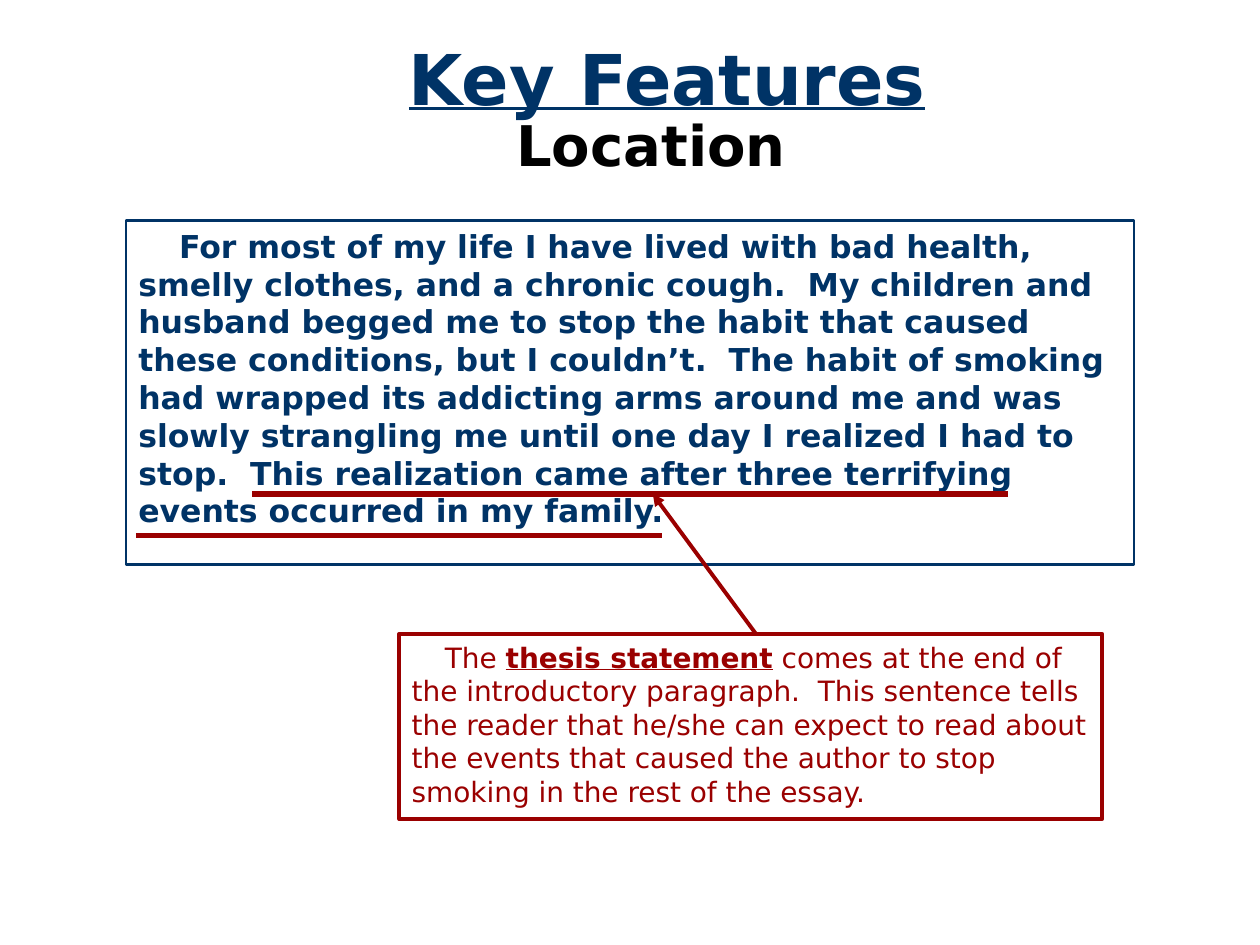
from dataclasses import dataclass

from lxml import etree
from pptx import Presentation
from pptx.dml.color import RGBColor
from pptx.enum.shapes import MSO_CONNECTOR, MSO_SHAPE
from pptx.enum.text import MSO_ANCHOR, PP_ALIGN
from pptx.oxml.ns import qn
from pptx.util import Cm, Pt

RECTANGLE, STRAIGHT = MSO_SHAPE.RECTANGLE, MSO_CONNECTOR.STRAIGHT
TOP, BOTTOM = MSO_ANCHOR.TOP, MSO_ANCHOR.BOTTOM
LEFT, CENTER = PP_ALIGN.LEFT, PP_ALIGN.CENTER


@dataclass(frozen=True)
class Theme:
    font: str = "DejaVu Sans"
    navy: RGBColor = RGBColor(0x00, 0x33, 0x66)
    red: RGBColor = RGBColor(0x9A, 0x00, 0x00)
    black: RGBColor = RGBColor(0, 0, 0)
    white: RGBColor = RGBColor(0xFF, 0xFF, 0xFF)
    title: int = 40
    subtitle: int = 32
    passage: int = 18
    callout: int = 16
    passage_border: float = 1.5
    callout_border: float = 2.25
    underline: float = 3


THEME = Theme()


def write_runs(shape, runs, size, color, align=LEFT, anchor=TOP, indent=0):
    """Fill one paragraph from (wording, bold, underlined) runs."""
    frame = shape.text_frame
    frame.word_wrap = True
    frame.vertical_anchor = anchor
    paragraph = frame.paragraphs[0]
    paragraph.alignment = align
    if indent:
        properties = paragraph._p.get_or_add_pPr()
        properties.set("marL", "0")
        properties.set("indent", str(Cm(indent)))
    for wording, bold, underlined in runs:
        run = paragraph.add_run()
        run.text = wording
        run.font.name = THEME.font
        run.font.size = Pt(size)
        run.font.color.rgb = color
        run.font.bold = bold
        run.font.underline = underlined


def add_panel(shapes, box, color, border):
    panel = shapes.add_shape(RECTANGLE, *map(Cm, box))
    panel.shadow.inherit = False
    panel.fill.solid()
    panel.fill.fore_color.rgb = THEME.white
    panel.line.color.rgb = color
    panel.line.width = Pt(border)
    return panel


def add_rule(shapes, start, end, width, arrow=False):
    rule = shapes.add_connector(STRAIGHT, *map(Cm, (*start, *end)))
    rule.line.color.rgb = THEME.red
    rule.line.width = Pt(width)
    if arrow:
        etree.SubElement(rule.line._get_or_add_ln(), qn("a:tailEnd"), type="triangle")
    etree.SubElement(rule._element.spPr, qn("a:effectLst"))


def add_heading(slide, box):
    left, top, width, height = box
    title = slide.shapes.add_textbox(Cm(left), Cm(top), Cm(width), Cm(height))
    write_runs(title, [("Key Features", True, True)],
               THEME.title, THEME.navy, CENTER, BOTTOM)
    subtitle = slide.shapes.add_textbox(
        Cm(left + 1.48), Cm(top + 1.53), Cm(width - 3.61), Cm(1.6))
    write_runs(subtitle, [("Location", True, False)],
               THEME.subtitle, THEME.black, CENTER)


def add_passage(slide, box):
    left, top, width, _ = box
    passage = add_panel(slide.shapes, box, THEME.navy, THEME.passage_border)
    write_runs(passage, [(
        "For most of my life I have lived with bad health, smelly clothes, and a "
        "chronic cough.  My children and husband begged me to stop the habit that "
        "caused these conditions, but I couldn’t.  The habit of smoking had wrapped "
        "its addicting arms around me and was slowly strangling me until one day I "
        "realized I had to stop.  This realization came after three terrifying "
        "events occurred in my family.", True, False)],
        THEME.passage, THEME.navy, indent=0.82)

    # Underlines below the two lines of the thesis sentence
    underlines = slide.shapes.add_group_shape().shapes
    for start, end, drop in ((2.54, width - 2.54, 5.51), (0.2, 10.8, 6.35)):
        add_rule(underlines, (left + start, top + drop), (left + end, top + drop),
                 THEME.underline)


def add_callout(slide, box, target):
    left, top, _, _ = box
    parts = slide.shapes.add_group_shape().shapes
    callout = add_panel(parts, box, THEME.red, THEME.callout_border)
    write_runs(callout, [
        ("The ", False, False),
        ("thesis statement", True, True),
        (" comes at the end of the introductory paragraph.  This sentence tells the "
         "reader that he/she can expect to read about the events that caused the "
         "author to stop smoking in the rest of the essay.", False, False)],
        THEME.callout, THEME.red, indent=0.67)
    add_rule(parts, (left + 7.19, top), target, THEME.callout_border, arrow=True)


def main():
    deck = Presentation()
    deck.slide_width, deck.slide_height = Cm(25.4), Cm(19.05)
    slide = deck.slides.add_slide(deck.slide_layouts[6])
    add_heading(slide, (1.7, 0.58, 23.5, 1.96))
    add_passage(slide, (2.54, 4.45, 20.32, 6.93))
    add_callout(slide, (8.05, 12.78, 14.17, 3.73), target=(13.16, 9.96))
    deck.save("out.pptx")


if __name__ == "__main__":
    main()
